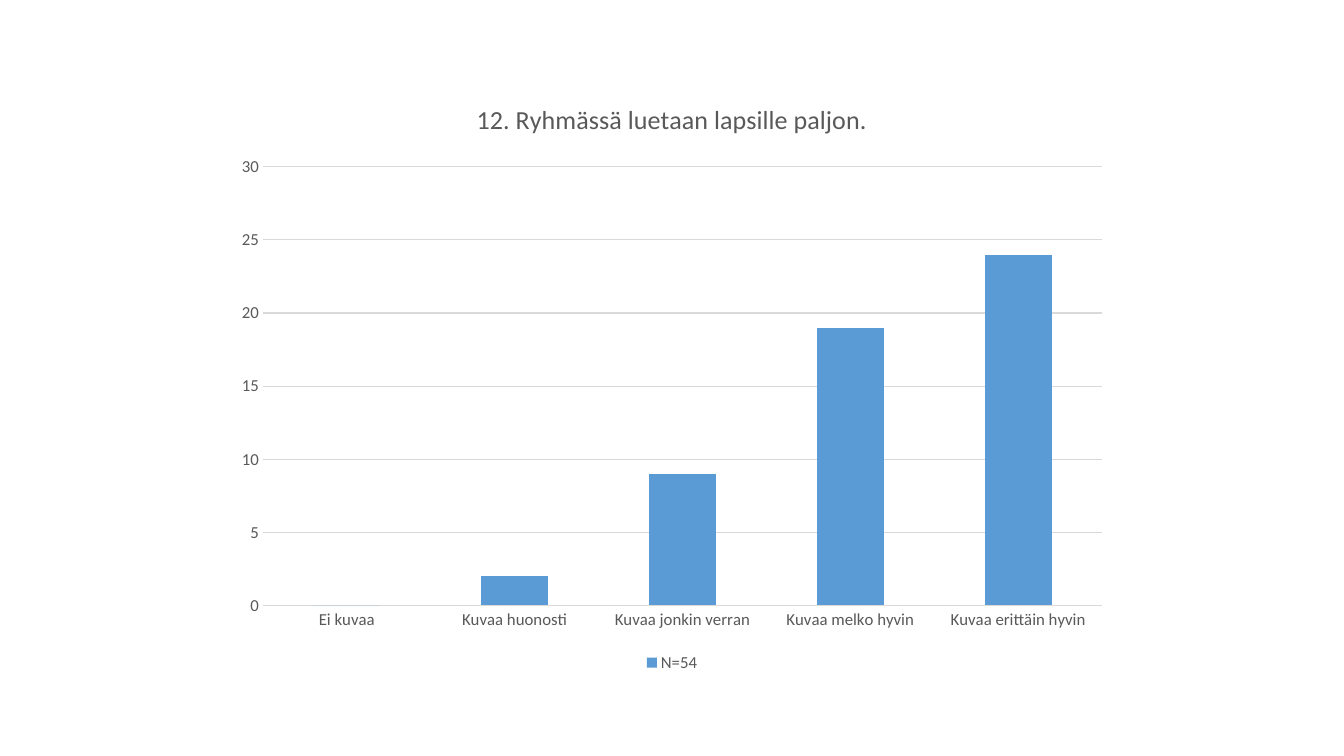
from pptx import Presentation
from pptx.chart.data import CategoryChartData
from pptx.dml.color import RGBColor
from pptx.enum.chart import XL_CHART_TYPE, XL_LEGEND_POSITION, XL_TICK_MARK
from pptx.util import Pt

# Content
TITLE = "12. Ryhmässä luetaan lapsille paljon."
SERIES_NAME = "N=54"
ANSWERS = {
    "Ei kuvaa": 0,
    "Kuvaa huonosti": 2,
    "Kuvaa jonkin verran": 9,
    "Kuvaa melko hyvin": 19,
    "Kuvaa erittäin hyvin": 24,
}

# Style and layout
FONT = "Calibri"
TEXT_GREY = RGBColor(0x59, 0x59, 0x59)
LINE_GREY = RGBColor(0xD9, 0xD9, 0xD9)
BAR_BLUE = RGBColor(0x5B, 0x9B, 0xD5)
SLIDE_WIDTH, SLIDE_HEIGHT = 960, 540
CHART_WIDTH, CHART_HEIGHT = 640, 426.67
CHART_LEFT = (SLIDE_WIDTH - CHART_WIDTH) / 2
CHART_TOP = (SLIDE_HEIGHT - CHART_HEIGHT) / 2


def style_font(font, size):
    font.name = FONT
    font.size = Pt(size)
    font.bold = False
    font.color.rgb = TEXT_GREY


def style_line(line):
    line.color.rgb = LINE_GREY
    line.width = Pt(0.75)


def main():
    presentation = Presentation()
    presentation.slide_width = Pt(SLIDE_WIDTH)
    presentation.slide_height = Pt(SLIDE_HEIGHT)
    slide = presentation.slides.add_slide(presentation.slide_layouts[6])

    # Chart
    chart_data = CategoryChartData()
    chart_data.categories = list(ANSWERS)
    chart_data.add_series(SERIES_NAME, list(ANSWERS.values()))
    chart = slide.shapes.add_chart(
        XL_CHART_TYPE.COLUMN_STACKED, Pt(CHART_LEFT), Pt(CHART_TOP),
        Pt(CHART_WIDTH), Pt(CHART_HEIGHT), chart_data).chart
    style_font(chart.font, 12)

    # Title
    chart.has_title = True
    chart.chart_title.include_in_layout = False
    title_frame = chart.chart_title.text_frame
    title_frame.text = TITLE
    style_font(title_frame.paragraphs[0].runs[0].font, 18.6)

    # Columns
    plot = chart.plots[0]
    plot.vary_by_categories = False
    plot.gap_width = 150
    plot.overlap = 100
    fill = plot.series[0].format.fill
    fill.solid()
    fill.fore_color.rgb = BAR_BLUE

    # Axes
    for axis in (chart.category_axis, chart.value_axis):
        axis.major_tick_mark = XL_TICK_MARK.NONE
        axis.minor_tick_mark = XL_TICK_MARK.NONE
        style_font(axis.tick_labels.font, 12)
    style_line(chart.category_axis.format.line)
    value_axis = chart.value_axis
    value_axis.minimum_scale = 0
    value_axis.maximum_scale = 30
    value_axis.major_unit = 5
    value_axis.format.line.fill.background()
    value_axis.has_major_gridlines = True
    style_line(value_axis.major_gridlines.format.line)

    # Legend
    chart.has_legend = True
    chart.legend.position = XL_LEGEND_POSITION.BOTTOM
    chart.legend.include_in_layout = False
    style_font(chart.legend.font, 12)

    presentation.save("out.pptx")


if __name__ == "__main__":
    main()
